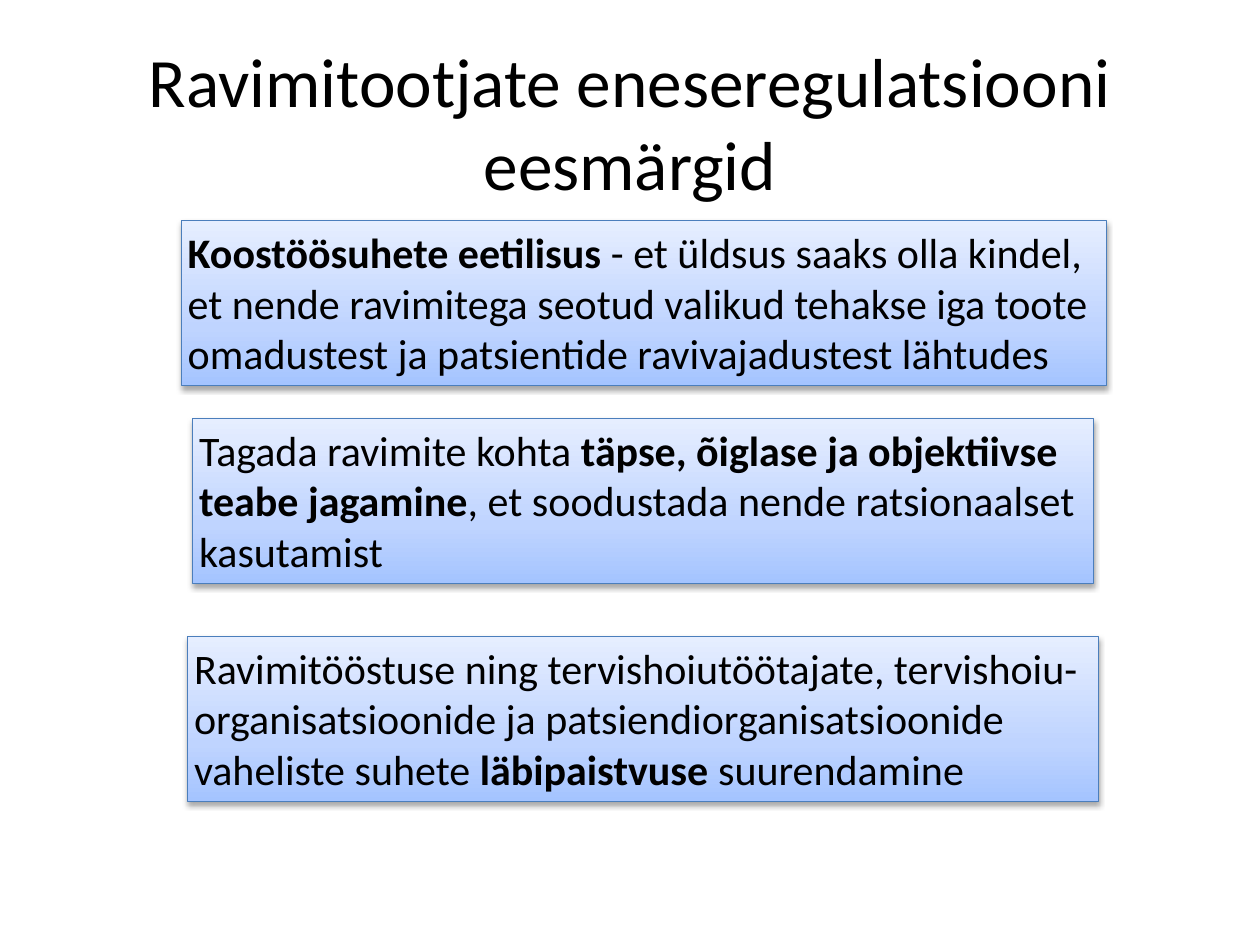
from copy import deepcopy
from lxml import etree
from pptx import Presentation
from pptx.dml.color import RGBColor
from pptx.enum.shapes import MSO_SHAPE
from pptx.enum.text import MSO_ANCHOR, PP_ALIGN
from pptx.oxml.ns import qn
from pptx.util import Inches, Pt

RECT = MSO_SHAPE.RECTANGLE
TOP, MID = MSO_ANCHOR.TOP, MSO_ANCHOR.MIDDLE
LEFT, MIDDLE = PP_ALIGN.LEFT, PP_ALIGN.CENTER


def hue(code):
    return RGBColor.from_string(code)


def write(shape, runs, size, align, anchor):
    frame = shape.text_frame
    pad = Inches(0.05)
    form = {"word_wrap": True, "vertical_anchor": anchor, "margin_left": pad,
            "margin_right": pad, "margin_top": pad, "margin_bottom": pad}
    for key, value in form.items():
        setattr(frame, key, value)
    para = frame.paragraphs[0]
    para.alignment = align
    for text, bold in runs:
        run = para.add_run()
        run.text = text
        for key, value in {"name": "Calibri", "size": Pt(size), "bold": bold}.items():
            setattr(run.font, key, value)
        run.font.color.rgb = hue("000000")


deck = Presentation()
deck.slide_width, deck.slide_height = Inches(10), Inches(7.5)
wide = deck.slide_width
slide = deck.slides.add_slide(deck.slide_layouts[5])

title = slide.shapes.title
place = {"left": wide * 0.05, "top": Inches(0.14), "width": wide * 0.9, "height": Inches(1.65)}
for key, value in place.items():
    setattr(title, key, int(value))
write(title, [("Ravimitootjate eneseregulatsiooni eesmärgid", False)], 39.6, MIDDLE, MID)

goals = [
    (0.144, 1.75, 0.734, [
        ("Koostöösuhete eetilisus ", True),
        ("- et üldsus saaks olla kindel, et nende ravimitega seotud valikud tehakse "
         "iga toote omadustest ja patsientide ravivajadustest lähtudes", False)]),
    (0.153, 3.32, 0.715, [
        ("Tagada ravimite kohta ", False),
        ("täpse, õiglase ja objektiivse teabe jagamine", True),
        (", et soodustada nende ratsionaalset kasutamist", False)]),
    (0.149, 5.05, 0.723, [
        ("Ravimitööstuse ning tervishoiutöötajate, tervishoiu-organisatsioonide ja "
         "patsiendiorganisatsioonide vaheliste suhete ", False),
        ("läbipaistvuse", True),
        (" suurendamine", False)]),
]
blend = [(0, "A4C4FF"), (0.35, "BFD4FF"), (1, "E6EEFF")]

for left, top, span, runs in goals:
    box = slide.shapes.add_shape(RECT, int(wide * left), Inches(top), int(wide * span), Inches(1.31))
    box.fill.gradient()
    box.fill.gradient_angle = 90
    stops = box.element.spPr.find(".//" + qn("a:gsLst"))
    stops.append(deepcopy(stops[0]))
    for stop, (spot, code) in zip(box.fill.gradient_stops, blend):
        stop.position = spot
        stop.color.rgb = hue(code)
    box.line.color.rgb = hue("4B7EBC")
    box.line.width = Pt(0.75)
    box.shadow.inherit = False
    glow = box.element.spPr.find(qn("a:effectLst"))
    shade = etree.SubElement(glow, qn("a:outerShdw"), blurRad=str(Pt(3)), dist=str(Pt(1.8)),
                             dir="5400000", rotWithShape="0")
    tone = etree.SubElement(shade, qn("a:srgbClr"), val="000000")
    etree.SubElement(tone, qn("a:alpha"), val="35000")
    write(box, runs, 24, LEFT, TOP)

deck.save("out.pptx")
